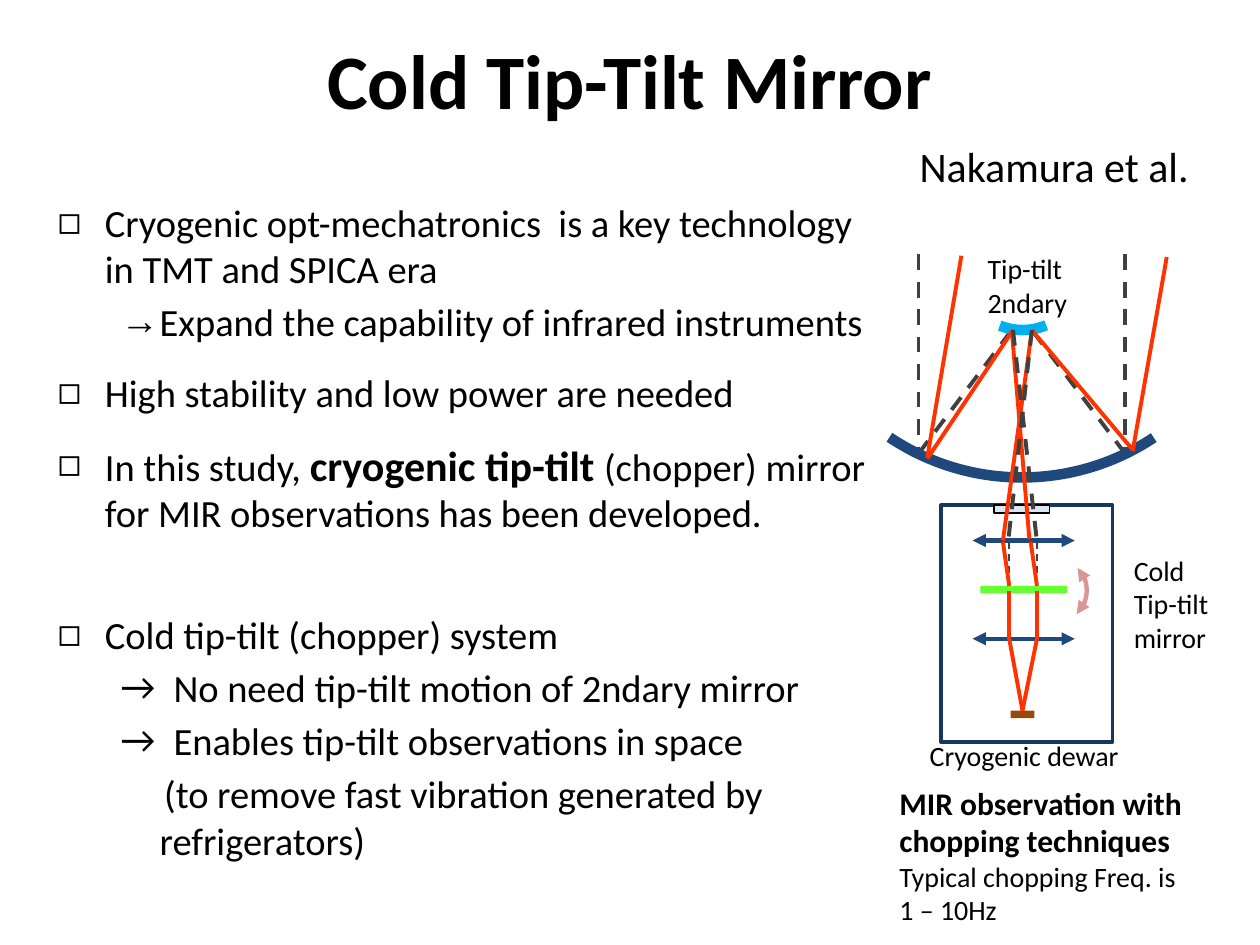
from dataclasses import dataclass
from typing import NamedTuple, Optional

from lxml.etree import SubElement
from pptx import Presentation
from pptx.dml.color import RGBColor
from pptx.enum.dml import MSO_LINE
from pptx.enum.shapes import MSO_CONNECTOR, MSO_SHAPE
from pptx.enum.text import MSO_ANCHOR, PP_ALIGN
from pptx.oxml.ns import qn
from pptx.util import Inches, Pt

BLACK = RGBColor(0x00, 0x00, 0x00)
NAVY = RGBColor(0x17, 0x37, 0x5E)
BLUE = RGBColor(0x1F, 0x49, 0x7D)
SKY = RGBColor(0x00, 0xB0, 0xF0)
PALE = RGBColor(0xDC, 0xE6, 0xF2)
GREEN = RGBColor(0x66, 0xFF, 0x33)
BROWN = RGBColor(0x98, 0x48, 0x07)
PINK = RGBColor(0xD9, 0x96, 0x94)
RED = RGBColor(0xFF, 0x33, 0x00)
GREY = RGBColor(0x40, 0x40, 0x40)

deck = Presentation()
deck.slide_width, deck.slide_height = Inches(10), Inches(7.5)
COL, ROW = deck.slide_width / 100, deck.slide_height / 75
slide = deck.slides.add_slide(deck.slide_layouts[6])


class Cell(NamedTuple):
    """Left, top, width and height in columns and rows."""
    col: float
    row: float
    cols: float
    rows: float

    def emu(self) -> tuple:
        """Return the cell as slide lengths."""
        return (int(self.col * COL), int(self.row * ROW),
                int(self.cols * COL), int(self.rows * ROW))


class Words(NamedTuple):
    """One run of text."""
    text: str
    size: float
    bold: bool = False


@dataclass
class Para:
    """A paragraph with its margin and first-line indent in columns."""
    runs: list
    margin: float = 0
    indent: float = 0
    bullet: str = ""
    bullet_font: str = "Arial"
    before: float = 0


@dataclass
class Pen:
    """The style of a line."""
    color: RGBColor
    width: float
    dashed: bool = False
    arrows: bool = False


def draw_outline(part, pen: Pen) -> None:
    """Apply a pen to a shape or connector."""
    part.line.color.rgb = pen.color
    part.line.width = Pt(pen.width)
    if pen.dashed:
        part.line.dash_style = MSO_LINE.DASH
    if pen.arrows:
        outline = part.element.spPr.find(qn("a:ln"))
        for end in ("a:headEnd", "a:tailEnd"):
            SubElement(outline, qn(end), type="triangle")


def draw_text(cell: Cell, paras: list, align: Optional[PP_ALIGN] = None,
              anchor: MSO_ANCHOR = MSO_ANCHOR.TOP, wrap: bool = True) -> None:
    """Place a text box run by run."""
    frame = slide.shapes.add_textbox(*cell.emu()).text_frame
    frame.word_wrap = wrap
    frame.vertical_anchor = anchor
    for index, para in enumerate(paras):
        line = frame.add_paragraph() if index else frame.paragraphs[0]
        line.alignment = align
        if para.before:
            line.space_before = Pt(para.before)
        settings = line._p.get_or_add_pPr()
        if para.margin:
            settings.set("marL", str(int(para.margin * COL)))
            settings.set("indent", str(int(para.indent * COL)))
        if para.bullet:
            SubElement(settings, qn("a:buFont"), typeface=para.bullet_font)
            SubElement(settings, qn("a:buChar"), char=para.bullet)
        for words in para.runs:
            run = line.add_run()
            run.text = words.text
            run.font.name = "Calibri"
            run.font.size = Pt(words.size)
            run.font.bold = words.bold
            run.font.color.rgb = BLACK


def draw_shape(kind: MSO_SHAPE, cell: Cell, fill: Optional[RGBColor] = None,
               pen: Optional[Pen] = None):
    """Place a preset shape."""
    part = slide.shapes.add_shape(kind, *cell.emu())
    part.shadow.inherit = False
    if fill is None:
        part.fill.background()
    else:
        part.fill.solid()
        part.fill.fore_color.rgb = fill
    if pen is None:
        part.line.fill.background()
    else:
        draw_outline(part, pen)
    return part


def draw_mirror(cell: Cell, start: float, end: float, color: RGBColor) -> None:
    """Place a curved mirror between two angles in degrees."""
    mirror = draw_shape(MSO_SHAPE.ARC, cell, pen=Pen(color, 6))
    for index, angle in enumerate((start, end)):
        mirror.adjustments[index] = angle * 0.6


def draw_ray(x1: float, y1: float, x2: float, y2: float, pen: Pen):
    """Place a straight line between two grid points."""
    ray = slide.shapes.add_connector(
        MSO_CONNECTOR.STRAIGHT, int(x1 * COL), int(y1 * ROW), int(x2 * COL), int(y2 * ROW))
    draw_outline(ray, pen)
    SubElement(ray.element.spPr, qn("a:effectLst"))
    return ray


def point(*runs: Words, before: float = 0) -> Para:
    """Return a main bullet point."""
    return Para(list(runs), 3.75, -3.75, "◻", before=before)


def label(cell: Cell, *lines: str) -> None:
    """Place a small label, one paragraph a line."""
    draw_text(cell, [Para([Words(line, 16)]) for line in lines])


def consequence(text: str) -> Para:
    """Return a point led by a wide arrow."""
    return Para([Words(text, 22)], 9.2, -4.2, "→", "Calibri", 4)


draw_text(Cell(72, 10.7, 23.6, 5), [Para([Words("Nakamura et al.", 24)])], wrap=False)
draw_text(Cell(5, 0, 90, 12.5), [Para([Words("Cold Tip-Tilt Mirror", 44, True)])],
          PP_ALIGN.CENTER, MSO_ANCHOR.MIDDLE)
draw_text(Cell(3.6, 15.3, 66.4, 57.2), [
    point(Words("Cryogenic opt-mechatronics  is a key technology in TMT and SPICA era", 22)),
    Para([Words("Expand the capability of infrared instruments", 22)], 8.1, -3.1, "→", before=4),
    point(Words("High stability and low power are needed", 22), before=13.8),
    point(Words("In this study, ", 22), Words("cryogenic tip-tilt ", 24, True),
          Words("(chopper) mirror for MIR observations has been developed.", 22), before=13.8),
    point(Words("Cold tip-tilt (chopper) system", 22), before=43),
    consequence("No need tip-tilt motion of 2ndary mirror"),
    consequence("Enables tip-tilt observations in space"),
    Para([Words("(to remove fast vibration generated by refrigerators)", 22)], 8.1, 0.35, before=4),
])
draw_text(Cell(70.4, 61.7, 24.4, 7.1),
          [Para([Words("MIR observation with chopping techniques", 18, True)])])
label(Cell(70.4, 67.7, 24.4, 6.4), "Typical chopping Freq. is", "1 – 10Hz")

TILTED = Pen(RED, 2.25)
STEADY = Pen(GREY, 2.25, dashed=True)
INNER = Pen(GREY, 1, dashed=True)
LENS = Pen(BLUE, 2.5, arrows=True)

draw_shape(MSO_SHAPE.RECTANGLE, Cell(74.7, 40.1, 13.6, 18.8), pen=Pen(NAVY, 2.25))
for x, focus in ((72.9, 80.3), (89.3, 81.9)):
    draw_ray(x, 20.2, x, 36, STEADY)
    draw_ray(x, 36, focus, 26.2, STEADY)
draw_shape(MSO_SHAPE.RECTANGLE, Cell(78.9, 40.1, 4.4, 0.6), PALE, Pen(BLACK, 1))
for x in (80.1, 82.3):
    draw_ray(x, 43, x, 46.8, INNER)
detector = draw_shape(MSO_SHAPE.RECTANGLE, Cell(80.2, 56.4, 1.9, 0.6), BROWN)
for y in (42.9, 50.7):
    draw_ray(77.2, y, 85.3, y, LENS)

draw_mirror(Cell(62.2, 0.1, 37.8, 37.8), 56.37, 123.79, BLUE)
draw_mirror(Cell(76.4, 16.8, 9.5, 9.4), 66.47, 112.48, SKY)
draw_shape(MSO_SHAPE.RECTANGLE, Cell(77.8, 46.5, 6.9, 0.6), GREEN)
swing = draw_shape(MSO_SHAPE.ARC, Cell(81.1, 44.3, 5.1, 5.3), pen=Pen(PINK, 2.5, arrows=True))
swing.rotation = 45

for x, lens_x in ((80.1, 79.6), (82.3, 81.8)):
    draw_ray(x, 50.7, 81.15, 56.4, TILTED).end_connect(detector, 0)
    draw_ray(x, 46.5, lens_x, 43, TILTED)
    draw_ray(x, 46.9, x, 50.7, TILTED)
for path_points in ((79.6, 42.9, 81.9, 26.2), (80.3, 26.2, 81.7, 42.8),
                    (81.9, 26.2, 89.9, 35.7), (89.9, 35.8, 92.6, 20.4),
                    (73.6, 36.3, 76.3, 20.3), (73.6, 36.4, 80.4, 26.2)):
    draw_ray(*path_points, TILTED)
draw_ray(80.4, 26.2, 82.3, 43, STEADY)
draw_ray(81.9, 26.2, 80, 43.1, STEADY)

label(Cell(77.4, 19.5, 18.3, 6.4), "Tip-tilt", "2ndary")
label(Cell(89, 43.4, 11, 9.1), "Cold", "Tip-tilt", "mirror")
label(Cell(72.8, 58.1, 19.2, 3.7), "Cryogenic dewar")

deck.save("out.pptx")
